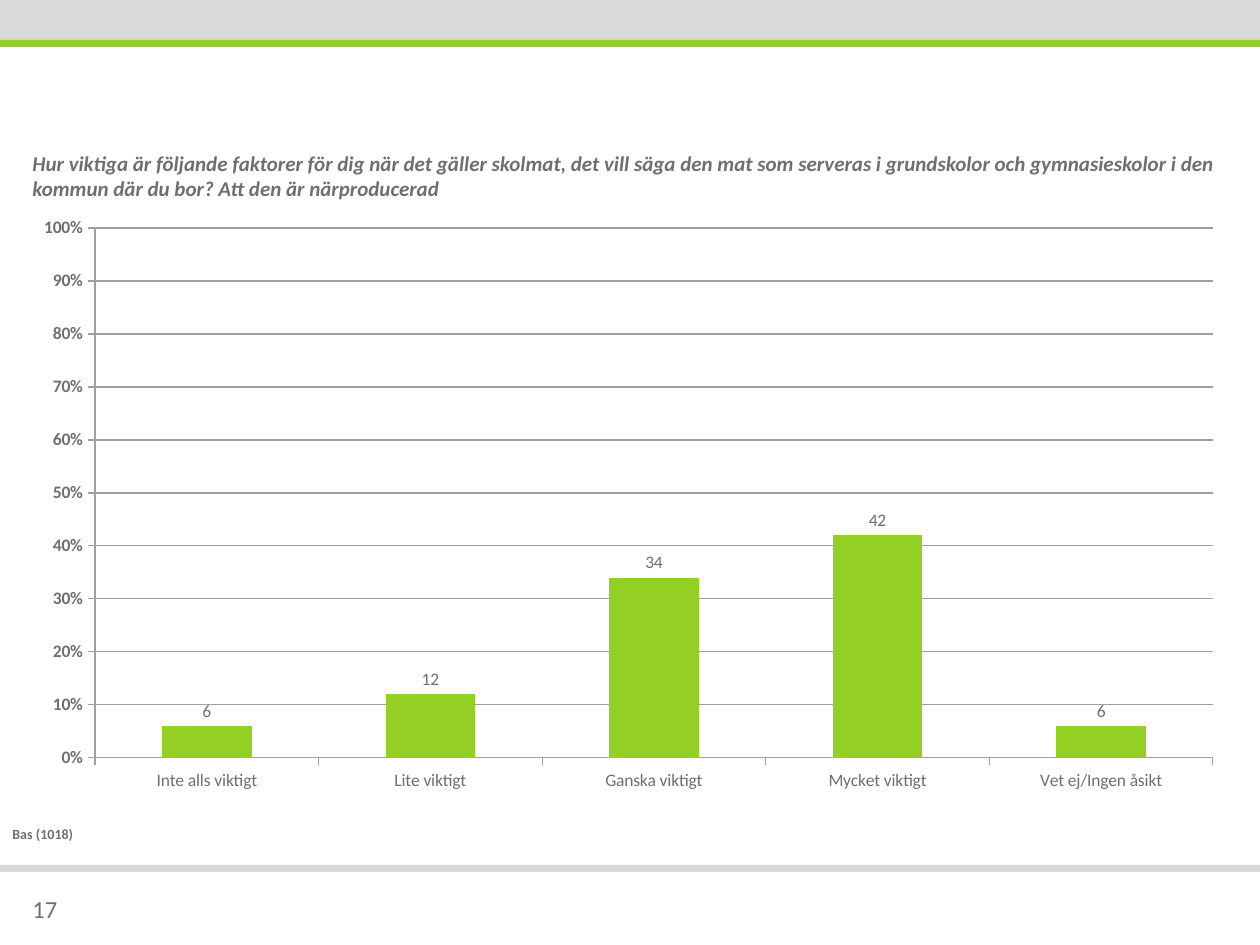
from dataclasses import dataclass

import pptx
import pptx.chart.data
import pptx.dml.color
import pptx.enum.chart
import pptx.enum.shapes
import pptx.enum.text
import pptx.oxml
import pptx.oxml.ns
import pptx.util

PIXELS_PER_INCH = 126
FONT = "Calibri"
GREY = "D9D9D9"
GREEN = "93D023"
TEXT_GREY = "6D6F71"
LINE_GREY = "A0A0A0"


@dataclass(frozen=True)
class Box:
    left: int
    top: int
    width: int
    height: int

    def emu(self) -> tuple:
        return tuple(px(n) for n in (self.left, self.top, self.width, self.height))


@dataclass(frozen=True)
class Band:
    box: Box
    color: str


@dataclass(frozen=True)
class Label:
    box: Box
    text: str
    size: int
    bold: bool = False
    italic: bool = False
    anchor: pptx.enum.text.MSO_ANCHOR = pptx.enum.text.MSO_ANCHOR.TOP


BANDS = [
    Band(Box(0, 0, 1260, 40), GREY),
    Band(Box(0, 865, 1260, 7), GREY),
    Band(Box(0, 40, 1260, 7), GREEN),
]
LABELS = [
    Label(Box(20, 876, 97, 65), "17", 14, anchor=pptx.enum.text.MSO_ANCHOR.MIDDLE),
    Label(
        Box(20, 144, 1221, 72),
        "Hur viktiga är följande faktorer för dig när det gäller skolmat, "
        "det vill säga den mat som serveras i grundskolor och gymnasieskolor "
        "i den kommun där du bor? Att den är närproducerad",
        12, bold=True, italic=True,
    ),
    Label(Box(0, 819, 1261, 30), "Bas (1018)", 8, bold=True),
]
CHART = Box(20, 207, 1218, 595)
PLOT = Box(95, 228, 1118, 530)
ANSWERS = {
    "Inte alls viktigt": 6,
    "Lite viktigt": 12,
    "Ganska viktigt": 34,
    "Mycket viktigt": 42,
    "Vet ej/Ingen åsikt": 6,
}


def px(length: int) -> int:
    return round(length * 914400 / PIXELS_PER_INCH)


def rgb(color: str) -> pptx.dml.color.RGBColor:
    return pptx.dml.color.RGBColor.from_string(color)


def style_font(font, size: int, bold: bool = False, italic: bool = False) -> None:
    font.name = FONT
    font.size = pptx.util.Pt(size)
    font.bold = bold
    font.italic = italic
    font.color.rgb = rgb(TEXT_GREY)


def draw_band(slide, band: Band) -> None:
    shape = slide.shapes.add_shape(pptx.enum.shapes.MSO_SHAPE.RECTANGLE, *band.box.emu())
    shape.shadow.inherit = False
    shape.fill.solid()
    shape.fill.fore_color.rgb = rgb(band.color)
    shape.line.fill.background()


def draw_label(slide, label: Label) -> None:
    frame = slide.shapes.add_textbox(*label.box.emu()).text_frame
    frame.word_wrap = True
    frame.vertical_anchor = label.anchor
    run = frame.paragraphs[0].add_run()
    run.text = label.text
    style_font(run.font, label.size, label.bold, label.italic)


def style_axis(axis, bold: bool) -> None:
    axis.major_tick_mark = pptx.enum.chart.XL_TICK_MARK.OUTSIDE
    axis.minor_tick_mark = pptx.enum.chart.XL_TICK_MARK.NONE
    axis.format.line.color.rgb = rgb(LINE_GREY)
    axis.format.line.width = pptx.util.Pt(0.75)
    style_font(axis.tick_labels.font, 10, bold)


def place_plot(chart, outer: Box, inner: Box) -> None:
    fractions = {
        "x": (inner.left - outer.left) / outer.width,
        "y": (inner.top - outer.top) / outer.height,
        "w": inner.width / outer.width,
        "h": inner.height / outer.height,
    }
    settings = '<c:layoutTarget val="inner"/><c:xMode val="edge"/><c:yMode val="edge"/>'
    settings += "".join(f'<c:{key} val="{value:.4f}"/>' for key, value in fractions.items())
    layout = pptx.oxml.parse_xml(
        f'<c:layout {pptx.oxml.ns.nsdecls("c")}>'
        f"<c:manualLayout>{settings}</c:manualLayout></c:layout>"
    )
    plot_area = chart._chartSpace.chart.plotArea
    for existing in plot_area.findall(pptx.oxml.ns.qn("c:layout")):
        plot_area.remove(existing)
    plot_area.insert(0, layout)


def draw_chart(slide) -> None:
    data = pptx.chart.data.CategoryChartData(number_format="General")
    data.categories = list(ANSWERS)
    data.add_series("Series 1", list(ANSWERS.values()))
    chart = slide.shapes.add_chart(
        pptx.enum.chart.XL_CHART_TYPE.COLUMN_CLUSTERED, *CHART.emu(), data
    ).chart
    chart.has_title = False
    chart.has_legend = False
    style_font(chart.font, 18)
    place_plot(chart, CHART, PLOT)

    style_axis(chart.category_axis, bold=False)
    value_axis = chart.value_axis
    style_axis(value_axis, bold=True)
    value_axis.minimum_scale = 0
    value_axis.maximum_scale = 100
    value_axis.major_unit = 10
    value_axis.tick_labels.number_format = '0"%"'
    value_axis.tick_labels.number_format_is_linked = False
    value_axis.has_major_gridlines = True
    value_axis.major_gridlines.format.line.color.rgb = rgb(LINE_GREY)
    value_axis.major_gridlines.format.line.width = pptx.util.Pt(0.75)

    plot = chart.plots[0]
    plot.gap_width = 150
    plot.vary_by_categories = False
    series = plot.series[0]
    series.format.fill.solid()
    series.format.fill.fore_color.rgb = rgb(GREEN)
    labels = series.data_labels
    labels.show_value = True
    labels.position = pptx.enum.chart.XL_LABEL_POSITION.OUTSIDE_END
    labels.number_format = "General"
    labels.number_format_is_linked = False
    style_font(labels.font, 10)


def main() -> None:
    presentation = pptx.Presentation()
    presentation.slide_width = pptx.util.Inches(10)
    presentation.slide_height = pptx.util.Inches(7.5)
    slide = presentation.slides.add_slide(presentation.slide_layouts[6])
    for band in BANDS:
        draw_band(slide, band)
    draw_chart(slide)
    for label in LABELS:
        draw_label(slide, label)
    presentation.save("out.pptx")


if __name__ == "__main__":
    main()
